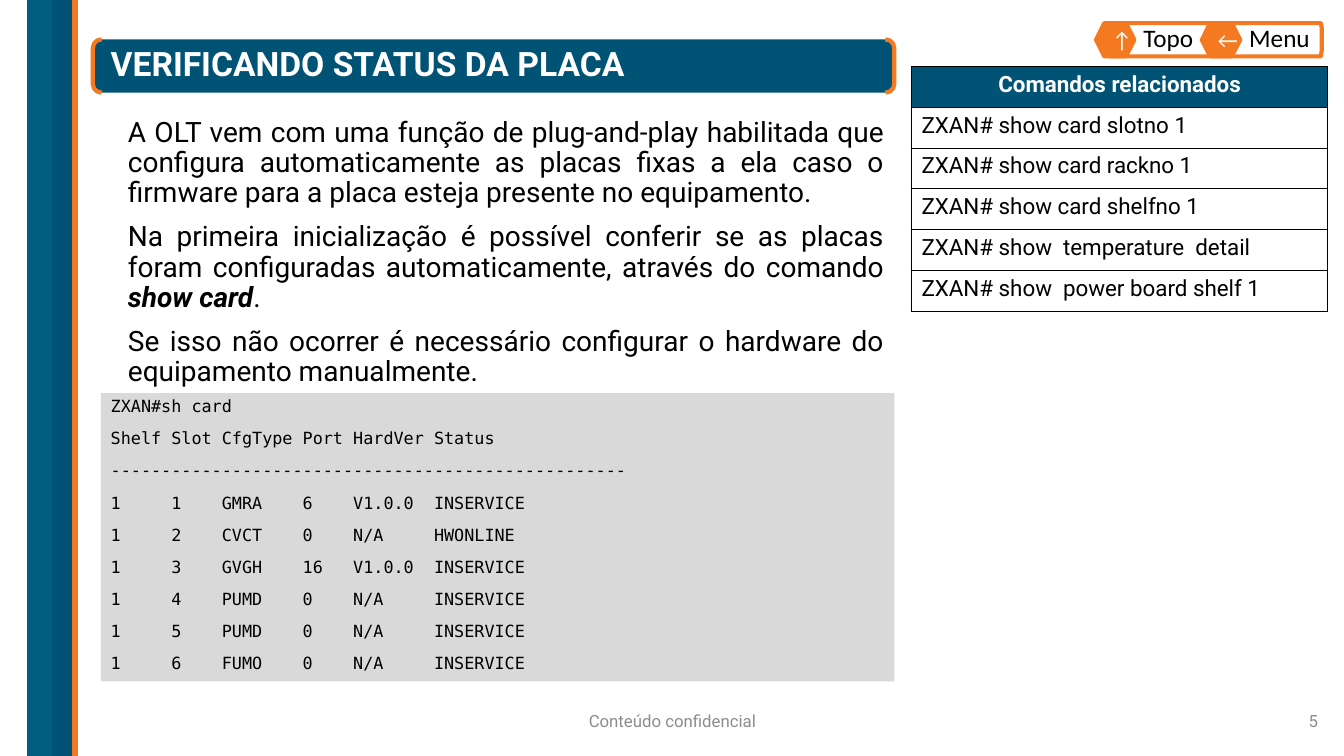
from dataclasses import dataclass

from lxml.etree import SubElement as Sub
from pptx import Presentation
from pptx.dml.color import RGBColor as Rgb
from pptx.enum.shapes import MSO_SHAPE as Form
from pptx.enum.text import MSO_ANCHOR as Anchor, PP_ALIGN as Align
from pptx.oxml.ns import qn
from pptx.util import Inches, Pt


@dataclass(frozen=True)
class Theme:
    """Colours, fonts and type sizes."""
    navy: str = "005374"
    blue: str = "005C80"
    deep: str = "005276"
    flame: str = "F47920"
    white: str = "FFFFFF"
    black: str = "000000"
    gray: str = "8C8C8C"
    panel: str = "D9D9D9"
    sans: str = "Roboto"
    mono: str = "DejaVu Sans Mono"
    tab: str = "Calibri"
    head: int = 24
    body: int = 20
    link: int = 18
    cell: int = 16
    small: int = 12


class Deck:
    """Draws the elements of the current slide in one style."""

    def __init__(self, theme):
        self.theme = theme
        self.file = Presentation()
        self.file.slide_width = Inches(13.33)
        self.file.slide_height = Inches(7.5)
        self.slide = self.file.slides.add_slide(self.file.slide_layouts[6])

    def style(self, para, size, color, face=None, bold=False, align=Align.LEFT):
        para.alignment = align
        font = para.font
        font.name = face or self.theme.sans
        font.size = Pt(size)
        font.bold = bold
        font.color.rgb = Rgb.from_string(color)

    def paint(self, shape, fill, line=None, width=1):
        shape.shadow.inherit = False
        shape.fill.solid()
        shape.fill.fore_color.rgb = Rgb.from_string(fill)
        if line:
            shape.line.color.rgb = Rgb.from_string(line)
            shape.line.width = Pt(width)
        else:
            shape.line.fill.background()

    def shape(self, form, box, fill, line=None, width=1):
        item = self.slide.shapes.add_shape(form, *map(Inches, box))
        self.paint(item, fill, line, width)
        return item

    def fill(self, frame, paras, size, color, face=None, bold=False,
             align=Align.LEFT, anchor=Anchor.TOP, lead=None, gap=0, indent=0):
        frame.word_wrap = True
        frame.vertical_anchor = anchor
        for i, runs in enumerate(paras):
            para = frame.paragraphs[0] if i == 0 else frame.add_paragraph()
            if indent:
                para._p.get_or_add_pPr().set("marL", str(Inches(indent)))
            if lead:
                para.line_spacing = lead
            para.space_before = Pt(gap if i else 0)
            self.style(para, size, color, face, bold, align)
            for j, text in enumerate(runs):
                run = para.add_run()
                run.text = text
                if j % 2:
                    run.font.bold = run.font.italic = True

    def text(self, box, paras, *args, **opts):
        item = self.slide.shapes.add_textbox(*map(Inches, box))
        self.fill(item.text_frame, paras, *args, **opts)

    def tab(self, left, arrow, label):
        look = self.theme
        top, wide, high = 0.23, 1.05, 0.33
        edge = [(wide - 0.01, 0), (wide, 0.05), (wide, high - 0.06),
                (wide - 0.01, high), (0, high)]
        pen = self.slide.shapes.build_freeform(Inches(left), Inches(top))
        pen.add_line_segments(
            [(Inches(left + x), Inches(top + y)) for x, y in edge])
        item = pen.convert_to_shape()
        self.paint(item, look.white, look.flame, 3)
        tint = item._element.spPr.find(qn("a:solidFill"))[0]
        Sub(tint, qn("a:alpha"), val="90000")
        frame = item.text_frame
        frame.margin_left = Inches(0.33)
        frame.margin_top = frame.margin_right = frame.margin_bottom = Inches(0.07)
        self.fill(frame, [[label]], look.link, look.black, look.tab,
                  anchor=Anchor.MIDDLE, lead=0.9)
        hexa = self.shape(Form.HEXAGON, (left - 0.14, top, 0.38, high),
                          look.flame, look.flame, 3)
        self.fill(hexa.text_frame, [[arrow]], look.cell, look.white, look.tab,
                  align=Align.CENTER, anchor=Anchor.MIDDLE)

    def border(self, cell):
        props = cell._tc.get_or_add_tcPr()
        for side in ("lnL", "lnR", "lnT", "lnB"):
            line = Sub(props, qn("a:" + side), w=str(Pt(1)))
            ink = Sub(line, qn("a:solidFill"))
            Sub(ink, qn("a:srgbClr"), val=self.theme.black)

    def table(self, box, rows):
        look = self.theme
        grid = self.slide.shapes.add_table(
            len(rows), 1, *map(Inches, box)).table
        for i, text in enumerate(rows):
            cell = grid.cell(i, 0)
            head = i == 0
            self.border(cell)
            cell.fill.solid()
            cell.fill.fore_color.rgb = Rgb.from_string(
                look.navy if head else look.white)
            cell.text = text
            self.style(cell.text_frame.paragraphs[0], look.cell,
                       look.white if head else look.black, bold=head,
                       align=Align.CENTER if head else Align.LEFT)


BODY = [
    ["A OLT vem com uma função de plug-and-play habilitada que configura "
     "automaticamente as placas fixas a ela caso o firmware para a placa "
     "esteja presente no equipamento."],
    ["Na primeira inicialização é possível conferir se as placas foram "
     "configuradas automaticamente, através do comando ", "show card", "."],
    ["Se isso não ocorrer é necessário configurar o hardware do "
     "equipamento manualmente."],
]
CARDS = [
    ("GMRA", "6", "V1.0.0", "INSERVICE"),
    ("CVCT", "0", "N/A", "HWONLINE"),
    ("GVGH", "16", "V1.0.0", "INSERVICE"),
    ("PUMD", "0", "N/A", "INSERVICE"),
    ("PUMD", "0", "N/A", "INSERVICE"),
    ("FUMO", "0", "N/A", "INSERVICE"),
]
LINKS = ["card slotno 1", "card rackno 1", "card shelfno 1",
         " temperature  detail", " power board shelf 1"]


def main():
    """Build the card status slide."""
    look = Theme()
    deck = Deck(look)
    deck.shape(Form.DOUBLE_BRACKET, (0.92, 0.39, 7.95, 0.53),
               look.navy, look.flame, 3)
    for left, wide, color in ((0.27, 0.45, look.blue), (0.52, 0.2, look.deep),
                              (0.72, 0.05, look.flame)):
        deck.shape(Form.RECTANGLE, (left, 0, wide, 7.5), color, color)

    deck.text((1, 0.39, 7.87, 0.53), [["VERIFICANDO STATUS DA PLACA"]],
              look.head, look.white, bold=True, anchor=Anchor.MIDDLE, lead=0.9)
    deck.text((4.42, 6.95, 4.5, 0.4), [["Conteúdo confidencial"]],
              look.small, look.gray, align=Align.CENTER, anchor=Anchor.MIDDLE)
    deck.text((12.42, 6.95, 0.75, 0.4), [["5"]],
              look.small, look.gray, align=Align.RIGHT, anchor=Anchor.MIDDLE)
    deck.text((0.92, 1.12, 7.95, 2.58), BODY, look.body, look.black,
              align=Align.JUSTIFY, lead=0.9, gap=10, indent=0.25)

    rows = [f"1     {slot:<5}{kind:<8}{port:<5}{ver:<8}{state}"
            for slot, (kind, port, ver, state) in enumerate(CARDS, 1)]
    lines = ["ZXAN#sh card", "Shelf Slot CfgType Port HardVer Status",
             "-" * 51, *rows]
    panel = deck.shape(Form.RECTANGLE, (1, 3.9, 7.87, 2.86), look.panel)
    deck.fill(panel.text_frame, [[line] for line in lines], look.small,
              look.black, look.mono, lead=0.9, gap=10)

    for i, (arrow, label) in enumerate((("↑", "Topo"), ("←", "Menu"))):
        deck.tab(11.01 + 1.05 * i, arrow, label)
    deck.table((9.04, 0.66, 4.13, 2.43),
               ["Comandos relacionados", *("ZXAN# show " + x for x in LINKS)])
    deck.file.save("out.pptx")


if __name__ == "__main__":
    main()
